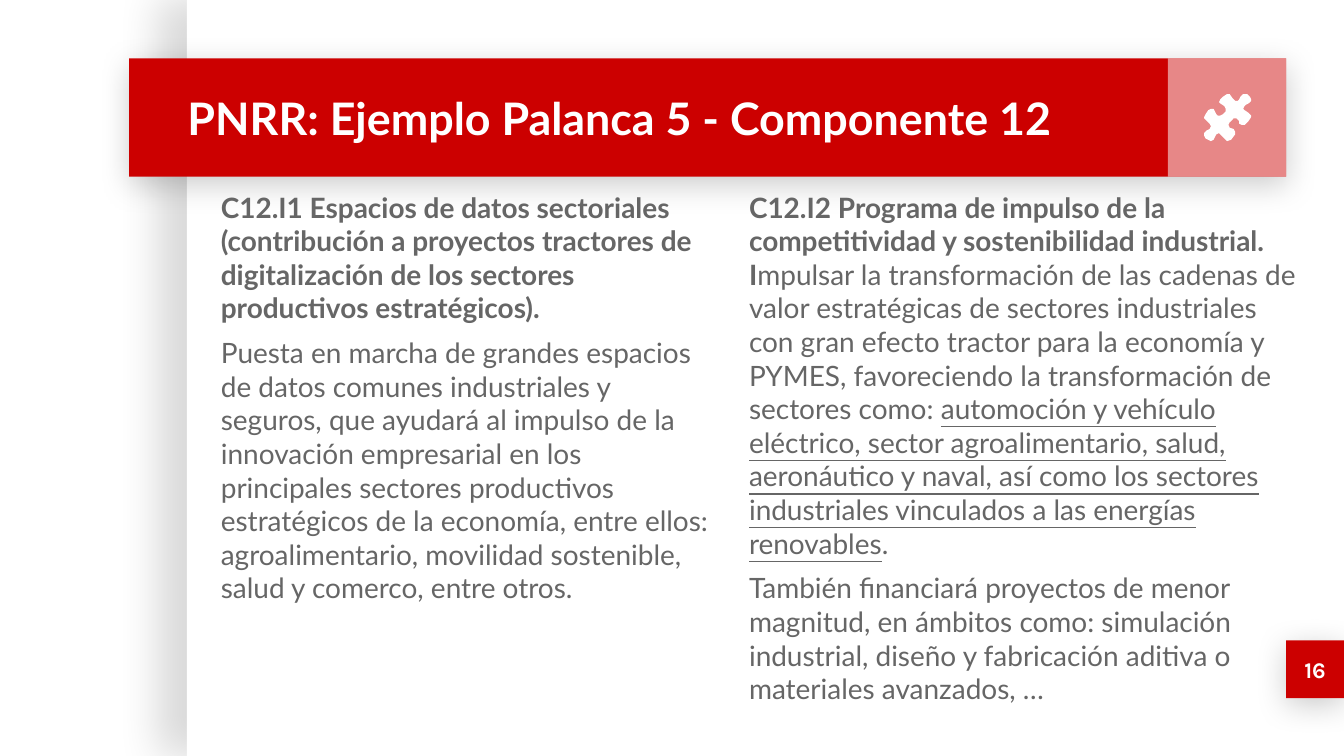
from pptx import Presentation
from pptx.dml.color import RGBColor
from pptx.enum.shapes import MSO_SHAPE as Preset
from pptx.enum.text import MSO_ANCHOR as Anchor, MSO_AUTO_SIZE as AutoSize, PP_ALIGN as Align
from pptx.oxml.ns import qn
from pptx.util import Pt
from lxml.etree import SubElement

PX = 4572
SLIDE_WIDTH, SLIDE_HEIGHT = 2000, 1125
RED, WHITE, GRAY = "CC0000", "FFFFFF", "666666"

TITLE_FONT = {"name": "Lato", "size": Pt(24), "bold": True}
BODY_FONT = {"name": "Lato", "size": Pt(15), "bold": False, "underline": False}
NUMBER_FONT = {"name": "Karla", "size": Pt(12), "bold": True}
BOLD, PLAIN, UNDERLINED = {"bold": True}, {}, {"underline": True}

PANEL_SHADOW = {"opacity": 15, "blur": 22.5, "distance": 15, "angle": 180}
BOX_SHADOW = {"opacity": 20, "blur": 16.9, "distance": 3.8, "angle": 90}

PUZZLE_UNIT = 2
PUZZLE = [
    (17, 0), (14, 2), (12, 4), (11, 6), (12, 7), (15, 9), (16, 11), (16, 13), (14, 15),
    (12, 16), (10, 16), (9, 15), (8, 13), (7, 11), (5, 11), (3, 12), (1, 15), (0, 17),
    (0, 18), (4, 22), (5, 24), (4, 26), (2, 27), (0, 29), (0, 31), (1, 33), (3, 34),
    (5, 35), (7, 34), (8, 32), (9, 30), (11, 29), (13, 31), (16, 34), (17, 35), (20, 34),
    (23, 30), (23, 28), (22, 26), (19, 25), (18, 23), (19, 21), (20, 20), (22, 18),
    (24, 18), (26, 20), (26, 22), (28, 23), (30, 23), (33, 20), (35, 17), (35, 16),
    (33, 14), (30, 12), (29, 11), (30, 9), (31, 8), (33, 7), (35, 5), (35, 4), (34, 2),
    (32, 0), (29, 0), (27, 2), (26, 4), (25, 5), (23, 5), (21, 3), (19, 0),
]

LEFT_TEXT = [
    [("C12.I1 Espacios de datos sectoriales (contribución a proyectos tractores de "
      "digitalización de los sectores productivos estratégicos).", BOLD)],
    [("Puesta en marcha de grandes espacios de datos comunes industriales y seguros, que "
      "ayudará al impulso de la innovación empresarial en los principales sectores "
      "productivos estratégicos de la economía, entre ellos: agroalimentario, movilidad "
      "sostenible, salud y comerco, entre otros.", PLAIN)],
]
RIGHT_TEXT = [
    [("C12.I2 Programa de impulso de la competitividad y sostenibilidad industrial. I", BOLD),
     ("mpulsar la transformación de las cadenas de valor estratégicas de sectores "
      "industriales con gran efecto tractor para la economía y PYMES, favoreciendo la "
      "transformación de sectores como: ", PLAIN),
     ("automoción y vehículo eléctrico, sector agroalimentario, salud, aeronáutico y "
      "naval, así como los sectores industriales vinculados a las energías renovables",
      UNDERLINED),
     (".", PLAIN)],
    [("También financiará proyectos de menor magnitud, en ámbitos como: simulación "
      "industrial, diseño y fabricación aditiva o materiales avanzados, …", PLAIN)],
]


def color(value):
    return RGBColor.from_string(value)


def set_values(target, values):
    for name, value in values.items():
        setattr(target, name, value)


def place(shape, box):
    names = ("left", "top", "width", "height")
    set_values(shape, {name: length * PX for name, length in zip(names, box)})


def format_frame(frame, anchor):
    margins = {f"margin_{side}": 20 * PX for side in ("left", "top", "right", "bottom")}
    set_values(frame, {"word_wrap": True, "auto_size": AutoSize.NONE,
                       "vertical_anchor": anchor, **margins})


def add_run(paragraph, text, font, font_color):
    run = paragraph.add_run()
    run.text = text
    set_values(run.font, font)
    run.font.color.rgb = color(font_color)


def paint(shape, fill):
    shape.shadow.inherit = False
    shape.fill.solid()
    shape.fill.fore_color.rgb = color(fill)
    shape.line.fill.background()


def add_opacity(color_element, percent):
    SubElement(color_element, qn("a:alpha"), val=str(percent * 1000))


def add_shadow(shape, opacity, blur, distance, angle):
    effects = shape.element.spPr.find(qn("a:effectLst"))
    shadow = SubElement(effects, qn("a:outerShdw"), blurRad=str(Pt(blur)),
                        dist=str(Pt(distance)), dir=str(angle * 60000),
                        algn="bl", rotWithShape="0")
    add_opacity(SubElement(shadow, qn("a:srgbClr"), val="000000"), opacity)


def add_box(slide, box, fill, shadow=None):
    shape = slide.shapes.add_shape(Preset.RECTANGLE, *(length * PX for length in box))
    paint(shape, fill)
    if shadow:
        add_shadow(shape, **shadow)
    return shape


def add_puzzle(slide, left, top):
    points = [(left + x * PUZZLE_UNIT, top + y * PUZZLE_UNIT) for x, y in PUZZLE]
    builder = slide.shapes.build_freeform(*points[0], scale=PX)
    builder.add_line_segments(points[1:], close=True)
    paint(builder.convert_to_shape(), WHITE)


def add_header(slide, box, text):
    left, top, width, height = box
    add_box(slide, box, RED, BOX_SHADOW)
    tile_left = left + width - height
    tile = add_box(slide, (tile_left, top, height, height), WHITE)
    add_opacity(tile.element.spPr.find(f".//{qn('a:srgbClr')}"), 53)
    add_puzzle(slide, tile_left + 54, top + 53)

    title = slide.shapes.title
    place(title, (left + 67, top, tile_left - left - 72, height))
    format_frame(title.text_frame, Anchor.MIDDLE)
    paragraph = title.text_frame.paragraphs[0]
    paragraph.alignment = Align.LEFT
    add_run(paragraph, text, TITLE_FONT, WHITE)
    title.element.getparent().append(title.element)


def add_column(slide, box, paragraphs):
    frame = slide.shapes.add_textbox(*(length * PX for length in box)).text_frame
    format_frame(frame, Anchor.TOP)
    for index, runs in enumerate(paragraphs):
        paragraph = frame.add_paragraph() if index else frame.paragraphs[0]
        paragraph.space_before = Pt(6 if index else 0)
        for text, emphasis in runs:
            add_run(paragraph, text, {**BODY_FONT, **emphasis}, GRAY)


def add_page_number(slide, box, number):
    shape = add_box(slide, box, RED, BOX_SHADOW)
    format_frame(shape.text_frame, Anchor.MIDDLE)
    paragraph = shape.text_frame.paragraphs[0]
    paragraph.alignment = Align.CENTER
    add_run(paragraph, number, NUMBER_FONT, WHITE)


def main():
    presentation = Presentation()
    presentation.slide_width = SLIDE_WIDTH * PX
    presentation.slide_height = SLIDE_HEIGHT * PX
    slide = presentation.slides.add_slide(presentation.slide_layouts[5])
    add_box(slide, (278, 0, 1722, SLIDE_HEIGHT), WHITE, PANEL_SHADOW)
    add_header(slide, (192, 87, 1722, 176), "PNRR: Ejemplo Palanca 5 - Componente 12")
    add_column(slide, (309, 263, 770, 738), LEFT_TEXT)
    add_column(slide, (1095, 263, 866, 738), RIGHT_TEXT)
    add_page_number(slide, (1914, 953, 86, 86), "16")
    presentation.save("out.pptx")


if __name__ == "__main__":
    main()
